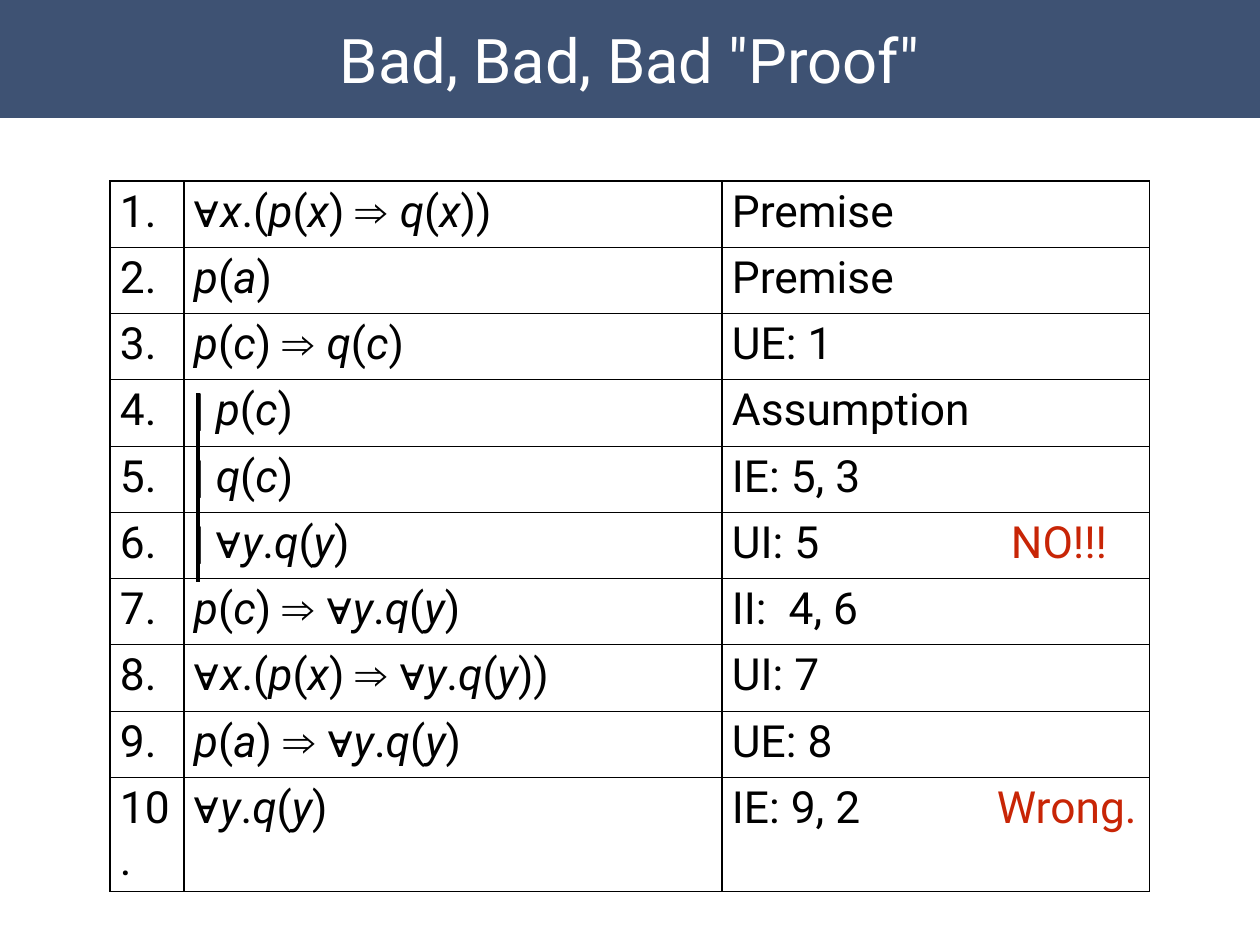
import pptx
import pptx.dml.color
import pptx.enum.shapes
import pptx.enum.text
import pptx.oxml
import pptx.oxml.ns
import pptx.util

# Content: formula, justification, remark, tab position of the remark
TITLE = 'Bad, Bad, Bad "Proof"'
STEPS = [
    ("∀x.(p(x) ⇒ q(x))", "Premise", "", 0),
    ("p(a)", "Premise", "", 0),
    ("p(c) ⇒ q(c)", "UE: 1", "", 0),
    ("| p(c)", "Assumption", "", 0),
    ("| q(c)", "IE: 5, 3", "", 0),
    ("| ∀y.q(y)", "UI: 5", "NO!!!", 274),
    ("p(c) ⇒ ∀y.q(y)", "II:  4, 6", "", 0),
    ("∀x.(p(x) ⇒ ∀y.q(y))", "UI: 7", "", 0),
    ("p(a) ⇒ ∀y.q(y)", "UE: 8", "", 0),
    ("∀y.q(y)", "IE: 9, 2", "Wrong.", 260),
]

BLUE = pptx.dml.color.RGBColor(0x3E, 0x52, 0x73)
WHITE = pptx.dml.color.RGBColor(0xFF, 0xFF, 0xFF)
BLACK = pptx.dml.color.RGBColor(0, 0, 0)
RED = pptx.dml.color.RGBColor(0xC8, 0x25, 0x06)
TEXT_FONT, SYMBOL_FONT = "Roboto", "Arial"

# Measures in px
PX = 10321  # EMU
SLIDE_W, SLIDE_H = 1260, 945
BANNER_H = 118
TABLE_LEFT, TABLE_TOP, TABLE_H = 110, 181, 663
COLUMNS = (74, 538, 428)
INSET = 5
BAR_X, BAR_TOP, BAR_BOTTOM = 198, 393, 582


def px(length):
    return pptx.util.Emu(length * PX)


def set_insets(part):
    part.margin_left = part.margin_right = px(INSET)
    part.margin_top = part.margin_bottom = px(INSET)


def add_xml(parent, xml):
    element = pptx.oxml.parse_xml(
        xml.replace(">", " " + pptx.oxml.ns.nsdecls("a") + ">", 1))
    parent.append(element)


def start_cell(cell):
    """Give a cell its borders, insets and text style; return its paragraph."""
    set_insets(cell)
    for side in "LRTB":
        add_xml(cell._tc.get_or_add_tcPr(),
                f'<a:ln{side} w="12700"><a:solidFill><a:srgbClr val="{BLACK}"/>'
                f'</a:solidFill></a:ln{side}>')
    cell.fill.background()
    paragraph = cell.text_frame.paragraphs[0]
    paragraph._p.get_or_add_pPr().set("marL", str(px(INSET)))
    paragraph.space_before = pptx.util.Pt(9)
    paragraph.font.size = pptx.util.Pt(36)
    paragraph.font.name = TEXT_FONT
    paragraph.font.color.rgb = BLACK
    return paragraph


def add_formula(paragraph, formula):
    """Variables are italic, logic symbols use their own font."""
    pieces = []
    for char in formula:
        kind = ("variable" if char.isalpha()
                else "symbol" if char in "∀⇒" else "plain")
        if pieces and (char == " " or pieces[-1][0] == kind):
            pieces[-1][1] += char
        else:
            pieces.append([kind, char])
    for kind, text in pieces:
        run = paragraph.add_run()
        run.text = text
        if kind == "variable":
            run.font.italic = True
        elif kind == "symbol":
            run.font.name = SYMBOL_FONT


presentation = pptx.Presentation()
presentation.slide_width, presentation.slide_height = px(SLIDE_W), px(SLIDE_H)
slide = presentation.slides.add_slide(presentation.slide_layouts[6])

# Title banner
banner = slide.shapes.add_shape(
    pptx.enum.shapes.MSO_SHAPE.RECTANGLE, 0, 0, px(SLIDE_W), px(BANNER_H))
banner.shadow.inherit = False
banner.fill.solid()
banner.fill.fore_color.rgb = BLUE
banner.line.fill.background()
set_insets(banner.text_frame)
banner.text_frame.vertical_anchor = pptx.enum.text.MSO_ANCHOR.MIDDLE
title = banner.text_frame.paragraphs[0]
title.text = TITLE
title.alignment = pptx.enum.text.PP_ALIGN.CENTER
title.font.size = pptx.util.Pt(50)
title.font.name = TEXT_FONT
title.font.color.rgb = WHITE

# Proof table
proof = slide.shapes.add_table(
    len(STEPS), len(COLUMNS), px(TABLE_LEFT), px(TABLE_TOP),
    px(sum(COLUMNS)), px(TABLE_H)).table
proof.first_row = proof.horz_banding = False
for column, width in zip(proof.columns, COLUMNS):
    column.width = px(width)

for number, (formula, reason, remark, tab) in enumerate(STEPS, 1):
    number_text, formula_text, reason_text = (
        start_cell(cell) for cell in proof.rows[number - 1].cells)
    number_text.add_run().text = f"{number}."
    add_formula(formula_text, formula)
    reason_text.add_run().text = reason
    if remark:
        reason_text.runs[0].text += "\t"
        remark_run = reason_text.add_run()
        remark_run.text = remark
        remark_run.font.color.rgb = RED
        # Tab stops stand just before the default run properties
        properties = reason_text._p.get_or_add_pPr()
        add_xml(properties, f'<a:tabLst><a:tab pos="{px(tab + INSET)}" algn="l"/>'
                            '</a:tabLst>')
        properties.append(properties.find(pptx.oxml.ns.qn("a:defRPr")))

# Bar beside the assumption's steps
bar = slide.shapes.add_connector(
    pptx.enum.shapes.MSO_CONNECTOR.STRAIGHT,
    px(BAR_X), px(BAR_BOTTOM), px(BAR_X), px(BAR_TOP))
bar.line.color.rgb = BLACK
bar.line.width = pptx.util.Pt(3)
add_xml(bar._element.spPr, "<a:effectLst></a:effectLst>")

presentation.save("out.pptx")
